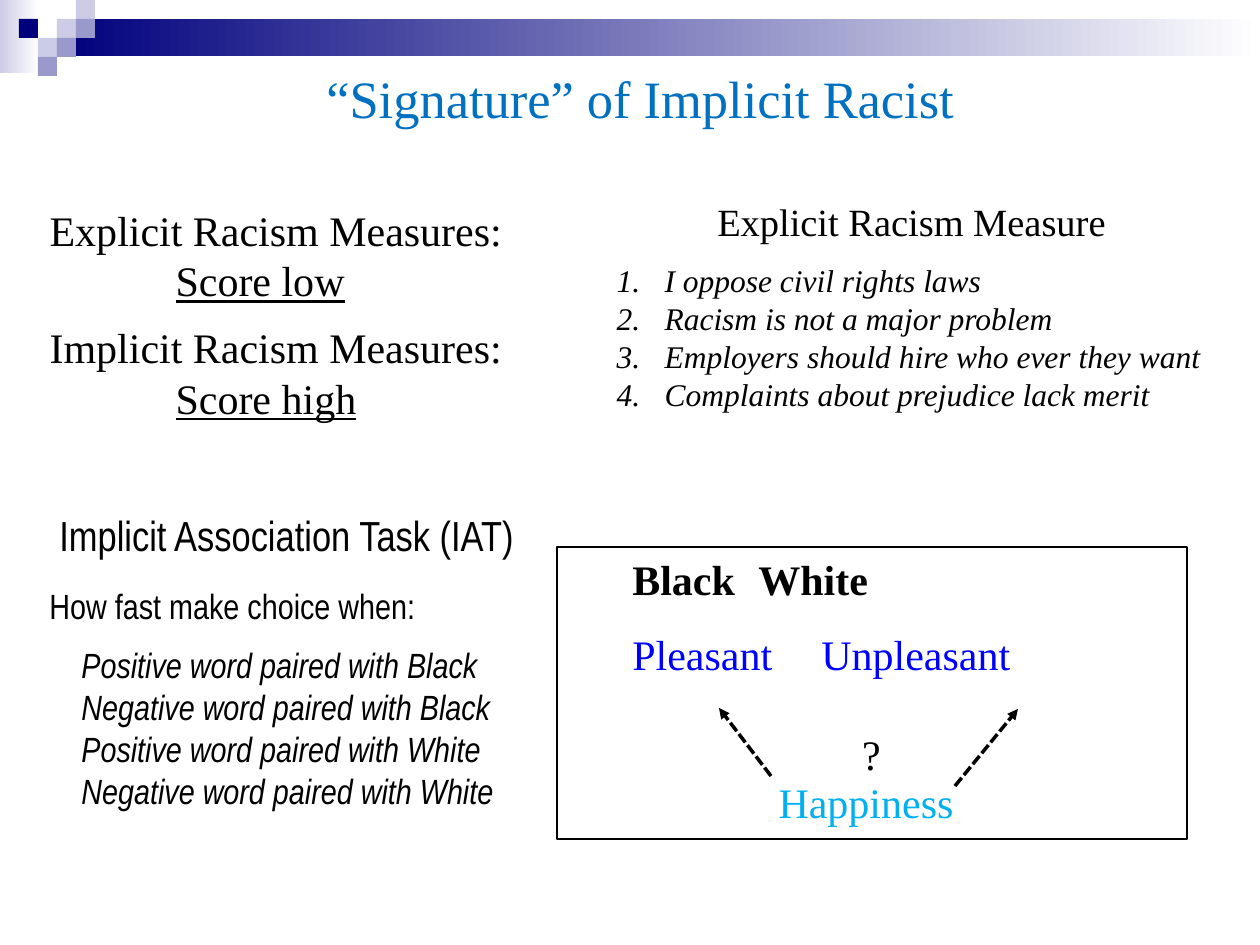
from dataclasses import dataclass
from typing import Any

import lxml.etree
import pptx
import pptx.dml.color
import pptx.enum.dml
import pptx.enum.shapes
import pptx.enum.text
import pptx.oxml.ns
import pptx.util

RGBColor = pptx.dml.color.RGBColor
Align = pptx.enum.text.PP_ALIGN

EMU_PER_PX = 914400 / 126
SQUARE = 19
LINE_HEIGHT = 1.2
SERIF = "Times New Roman"
NARROW = "Arial Narrow"

BLACK = RGBColor(0x00, 0x00, 0x00)
WHITE = RGBColor(0xFF, 0xFF, 0xFF)
NAVY = RGBColor(0x00, 0x00, 0x7D)
LAVENDER = RGBColor(0xCC, 0xCC, 0xE6)
PERIWINKLE = RGBColor(0x99, 0x99, 0xCC)
TITLE_BLUE = RGBColor(0x00, 0x70, 0xC0)
BLUE = RGBColor(0x00, 0x00, 0xFF)
SKY = RGBColor(0x00, 0xB0, 0xF0)


@dataclass(frozen=True)
class Box:
    left: int
    top: int
    width: int
    height: int


@dataclass(frozen=True)
class Square:
    column: int
    row: int
    color: RGBColor


@dataclass(frozen=True)
class Arrow:
    start: tuple[int, int]
    end: tuple[int, int]


GRADIENT_BARS = [
    (Box(0, 0, 39, 73), LAVENDER),
    (Box(57, 19, 1203, 37), NAVY),
]
SQUARES = [
    Square(3, 1, LAVENDER), Square(4, 0, LAVENDER), Square(4, 1, PERIWINKLE),
    Square(2, 2, LAVENDER), Square(1, 1, NAVY), Square(3, 2, PERIWINKLE),
    Square(2, 3, PERIWINKLE),
]
ARROWS = [Arrow((771, 776), (719, 708)), Arrow((955, 786), (1018, 709))]
STATEMENTS = [
    "I oppose civil rights laws",
    "Racism is not a major problem",
    "Employers should hire who ever they want",
    "Complaints about prejudice lack merit",
]
PAIRINGS = [f"{tone} word paired with {group}"
            for group in ("Black", "White") for tone in ("Positive", "Negative")]


def px(length: int) -> pptx.util.Emu:
    return pptx.util.Emu(round(length * EMU_PER_PX))


def corners(box: Box) -> tuple:
    return px(box.left), px(box.top), px(box.width), px(box.height)


def add_child(parent: Any, tag: str, **attributes: str) -> Any:
    return lxml.etree.SubElement(parent, pptx.oxml.ns.qn(tag), attributes)


def add_rectangle(slide: Any, box: Box) -> Any:
    shape = slide.shapes.add_shape(pptx.enum.shapes.MSO_SHAPE.RECTANGLE, *corners(box))
    shape.shadow.inherit = False
    shape.line.fill.background()
    return shape


def add_gradient_bar(slide: Any, box: Box, color: RGBColor) -> None:
    fill = add_rectangle(slide, box).fill
    fill.gradient()
    fill.gradient_angle = 0
    for stop, stop_color in zip(fill.gradient_stops, (color, WHITE)):
        stop.color.rgb = stop_color


def add_square(slide: Any, square: Square) -> None:
    box = Box(square.column * SQUARE, square.row * SQUARE, SQUARE, SQUARE)
    fill = add_rectangle(slide, box).fill
    fill.solid()
    fill.fore_color.rgb = square.color


def add_arrow(slide: Any, arrow: Arrow) -> None:
    connector = slide.shapes.add_connector(
        pptx.enum.shapes.MSO_CONNECTOR.STRAIGHT,
        *map(px, arrow.start), *map(px, arrow.end))
    connector.line.color.rgb = BLACK
    connector.line.width = pptx.util.Pt(2)
    connector.line.dash_style = pptx.enum.dml.MSO_LINE.SQUARE_DOT
    add_child(connector.line._get_or_add_ln(), "a:tailEnd", type="triangle")
    add_child(connector._element.spPr, "a:effectLst")


def prepare_text(shape: Any) -> Any:
    frame = shape.text_frame
    frame.word_wrap = True
    frame.auto_size = pptx.enum.text.MSO_AUTO_SIZE.NONE
    frame.vertical_anchor = pptx.enum.text.MSO_ANCHOR.TOP
    return frame


def place(placeholder: Any, box: Box) -> Any:
    placeholder.left, placeholder.top, placeholder.width, placeholder.height = corners(box)
    return prepare_text(placeholder)


def add_text_box(slide: Any, box: Box) -> Any:
    return prepare_text(slide.shapes.add_textbox(*corners(box)))


def write(frame: Any, text: str, *, size: int = 24, font: str = SERIF,
          color: RGBColor = BLACK, align: Any = Align.LEFT, bold: bool = False,
          italic: bool = False, underline: bool = False, before: float = 0,
          margin: int = 0, numbered: bool = False, tabs: tuple = ()) -> None:
    """Fill the frame's empty first paragraph, or add a paragraph after it."""
    paragraph = frame.paragraphs[0] if not frame.text else frame.add_paragraph()
    paragraph.alignment = align
    paragraph.line_spacing = pptx.util.Pt(size * LINE_HEIGHT)
    paragraph.space_before = pptx.util.Pt(before)
    paragraph.space_after = pptx.util.Pt(0)
    properties = paragraph._p.get_or_add_pPr()
    properties.set("marL", str(px(margin)))
    properties.set("indent", str(px(-margin if numbered else 0)))
    if numbered:
        add_child(properties, "a:buAutoNum", type="arabicPeriod")
    else:
        add_child(properties, "a:buNone")
    if tabs:
        tab_list = add_child(properties, "a:tabLst")
        for position in tabs:
            add_child(tab_list, "a:tab", pos=str(px(position)), algn="l")
    run = paragraph.add_run()
    run.text = text
    run.font.name = font
    run.font.size = pptx.util.Pt(size)
    run.font.color.rgb = color
    run.font.bold = bold
    run.font.italic = italic
    run.font.underline = underline


def main() -> None:
    presentation = pptx.Presentation()
    presentation.slide_width, presentation.slide_height = px(1260), px(945)
    slide = presentation.slides.add_slide(presentation.slide_layouts.get_by_name("Two Content"))
    title, measures, statements = slide.placeholders

    for box, color in GRADIENT_BARS:
        add_gradient_bar(slide, box, color)
    for square in SQUARES:
        add_square(slide, square)

    write(place(title, Box(126, 60, 1155 - 126, 77)), "“Signature” of Implicit Racist",
          size=30, color=TITLE_BLUE, align=Align.CENTER)

    frame = place(measures, Box(37, 198, 540, 233))
    for kind, score, before in (("Explicit", "low", 0), ("Implicit", "high", 9.6)):
        write(frame, f"{kind} Racism Measures:", before=before)
        write(frame, f"Score {score}", underline=True, margin=126)

    frame = place(statements, Box(604, 192, 615, 229))
    write(frame, "Explicit Racism Measure", size=22, align=Align.CENTER)
    for index, statement in enumerate(STATEMENTS):
        write(frame, statement, size=18, italic=True, margin=48, numbered=True,
              before=0 if index else 9.6)

    task_box = add_rectangle(slide, Box(557, 547, 630, 292))
    task_box.fill.background()
    task_box.line.color.rgb = BLACK
    task_box.line.width = pptx.util.Pt(0.75)
    frame = prepare_text(task_box)
    write(frame, "\tBlack\tWhite", bold=True, tabs=(41, 408))
    write(frame, "\tPleasant\tUnpleasant", color=BLUE, before=14.4, tabs=(20, 377))
    write(add_text_box(slide, Box(756, 770, 220, 64)), "Happiness",
          color=SKY, align=Align.CENTER)

    frame = add_text_box(slide, Box(37, 503, 499, 318))
    write(frame, "Implicit Association Task (IAT)", font=NARROW, align=Align.CENTER)
    write(frame, "How fast make choice when:", size=20, font=NARROW, before=14.4)
    for index, pairing in enumerate(PAIRINGS):
        write(frame, pairing, size=20, font=NARROW, italic=True, margin=32,
              before=0 if index else 9.6)

    for arrow in ARROWS:
        add_arrow(slide, arrow)
    write(add_text_box(slide, Box(840, 722, 63, 63)), "?", align=Align.CENTER)

    presentation.save("out.pptx")


if __name__ == "__main__":
    main()
